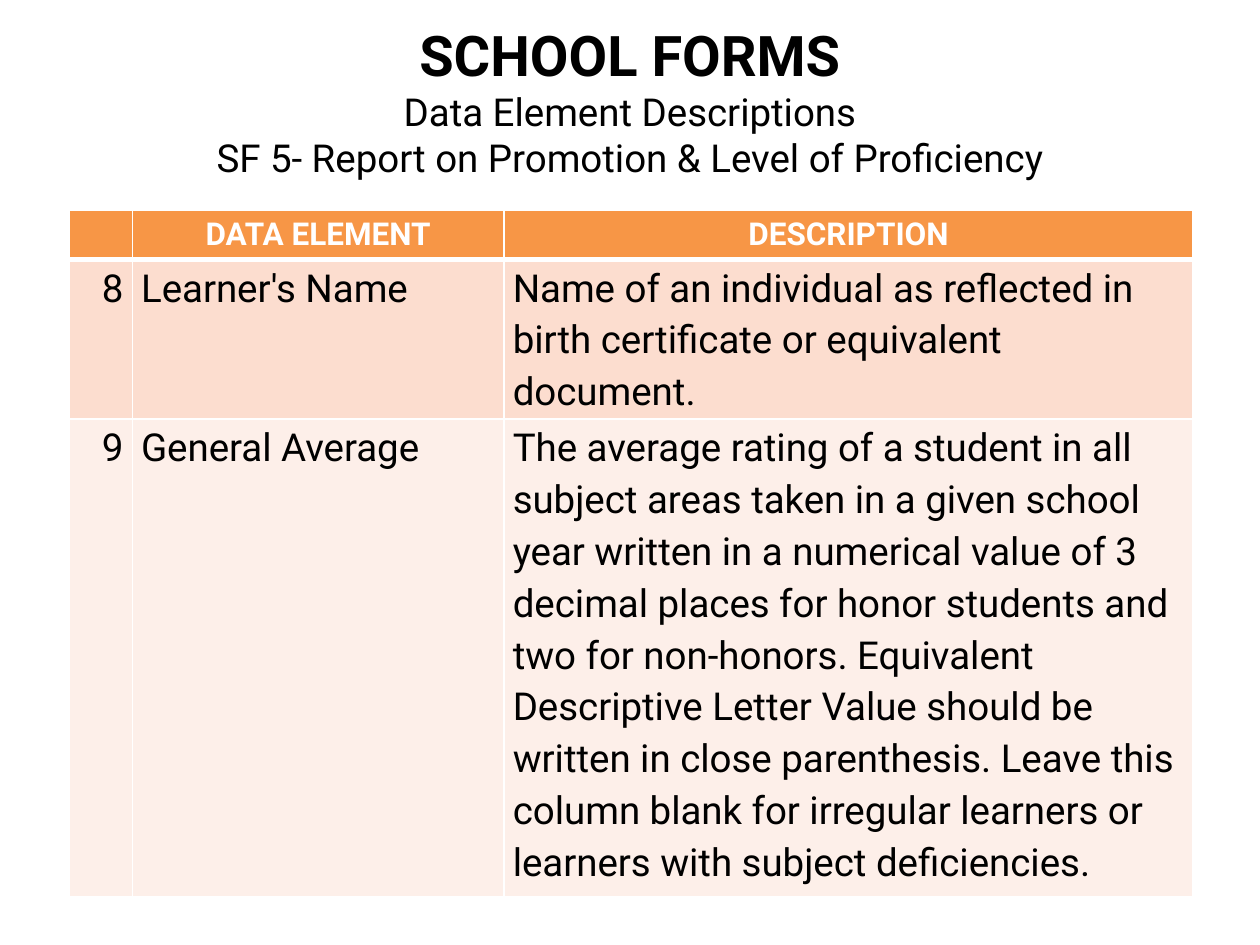
from typing import NamedTuple

from lxml.etree import SubElement
from pptx import Presentation
from pptx.dml.color import RGBColor
from pptx.enum.text import MSO_ANCHOR, PP_ALIGN
from pptx.oxml.ns import qn
from pptx.util import Inches, Pt

FONT = "Roboto"
BLACK, WHITE = "000000", "FFFFFF"
THIN, THICK = 1, 3
COLUMN_WIDTHS = (0.5, 2.95, 5.47)
HEADER_ALIGNMENTS = (PP_ALIGN.CENTER,) * 3
BODY_ALIGNMENTS = (PP_ALIGN.RIGHT, PP_ALIGN.LEFT, PP_ALIGN.LEFT)


class TextStyle(NamedTuple):
    size: int
    color: str
    bold: bool = False


class FormRow(NamedTuple):
    texts: tuple[str, str, str]
    height: float
    fill: str
    style: TextStyle
    alignments: tuple = BODY_ALIGNMENTS
    top_border: int = THIN
    bottom_border: int = THIN


BODY = TextStyle(22, BLACK)
TITLE_LINES = (
    ("SCHOOL FORMS", TextStyle(32, BLACK, True)),
    ("Data Element Descriptions", BODY),
    ("SF 5- Report on Promotion & Level of Proficiency", BODY),
)
ROWS = (
    FormRow(("", "DATA ELEMENT", "DESCRIPTION"), 0.39, "F79646",
            TextStyle(18, WHITE, True), HEADER_ALIGNMENTS, bottom_border=THICK),
    FormRow(("8", "Learner's Name",
             "Name of an individual as reflected in birth certificate or "
             "equivalent document."),
            1.23, "FCDDCF", BODY, top_border=THICK),
    FormRow(("9", "General Average",
             "The average rating of a student in all subject areas taken in a "
             "given school year written in a numerical value of 3 decimal places "
             "for honor students and two for non-honors. Equivalent Descriptive "
             "Letter Value should be written in close parenthesis. Leave this "
             "column blank for irregular learners or learners with subject "
             "deficiencies."),
            3.7, "FDEFE9", BODY),
)


def rgb(color: str) -> RGBColor:
    return RGBColor.from_string(color)


def write_paragraph(paragraph, text: str, style: TextStyle, alignment) -> None:
    paragraph.text = text
    paragraph.alignment = alignment
    font = paragraph.font
    font.name, font.size, font.bold = FONT, Pt(style.size), style.bold
    font.color.rgb = rgb(style.color)


def set_border(cell, side: str, width: int) -> None:
    properties = cell._tc.get_or_add_tcPr()
    line = SubElement(properties, qn(f"a:ln{side}"), w=str(Pt(width)))
    fill = SubElement(line, qn("a:solidFill"))
    SubElement(fill, qn("a:srgbClr"), val=WHITE)


def draw_title(slide) -> None:
    shape = slide.shapes.add_textbox(Inches(0.5), Inches(0.17), Inches(9), Inches(1.25))
    frame = shape.text_frame
    frame.word_wrap = True
    frame.vertical_anchor = MSO_ANCHOR.MIDDLE
    for index, (text, style) in enumerate(TITLE_LINES):
        paragraph = frame.add_paragraph() if index else frame.paragraphs[0]
        write_paragraph(paragraph, text, style, PP_ALIGN.CENTER)


def draw_cell(cell, text: str, alignment, row: FormRow) -> None:
    cell.margin_left = cell.margin_right = Inches(0.07)
    cell.margin_top = cell.margin_bottom = 0
    for side, width in (("L", THIN), ("R", THIN),
                        ("T", row.top_border), ("B", row.bottom_border)):
        set_border(cell, side, width)
    cell.fill.solid()
    cell.fill.fore_color.rgb = rgb(row.fill)
    paragraph = cell.text_frame.paragraphs[0]
    write_paragraph(paragraph, text, row.style, alignment)
    paragraph.line_spacing = 1.15


def draw_table(slide) -> None:
    table = slide.shapes.add_table(
        len(ROWS), len(COLUMN_WIDTHS), Inches(0.55), Inches(1.67),
        Inches(sum(COLUMN_WIDTHS)), Inches(sum(row.height for row in ROWS)),
    ).table
    for column, width in zip(table.columns, COLUMN_WIDTHS):
        column.width = Inches(width)
    for table_row, row in zip(table.rows, ROWS):
        table_row.height = Inches(row.height)
        for cell, text, alignment in zip(table_row.cells, row.texts, row.alignments):
            draw_cell(cell, text, alignment, row)


def main() -> None:
    """Build the school forms slide with its data element table."""
    presentation = Presentation()
    presentation.slide_width, presentation.slide_height = Inches(10), Inches(7.5)
    slide = presentation.slides.add_slide(presentation.slide_layouts[6])
    draw_title(slide)
    draw_table(slide)
    presentation.save("out.pptx")


if __name__ == "__main__":
    main()
